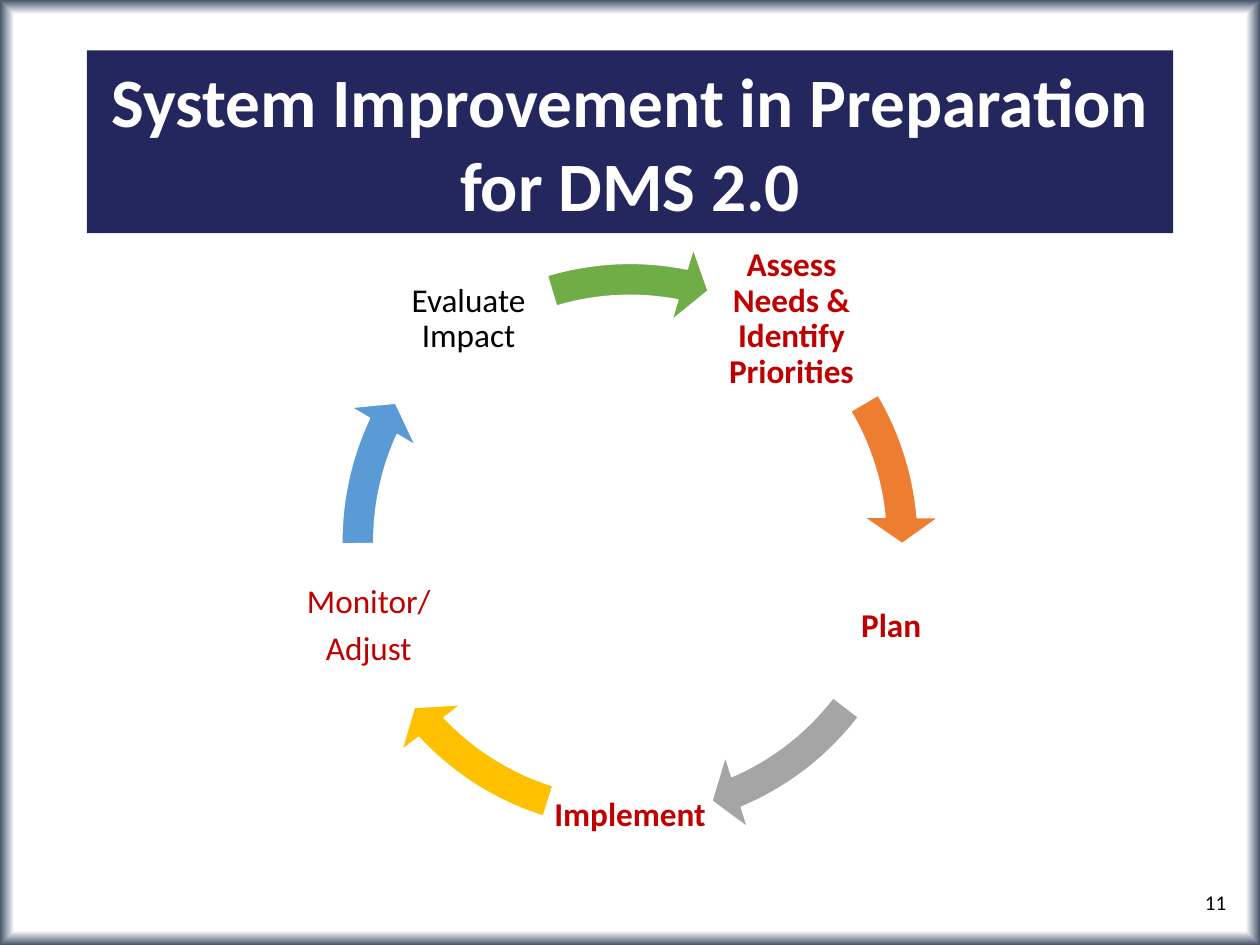
from math import cos, radians, sin

from lxml.etree import SubElement
from pptx import Presentation
from pptx.dml.color import RGBColor as Color
from pptx.enum.shapes import MSO_SHAPE as Shape
from pptx.enum.text import MSO_ANCHOR as Anchor, PP_ALIGN as Align
from pptx.oxml.ns import qn
from pptx.util import Inches, Pt

WIDTH, HEIGHT = 10, 7.5
FONT = "Calibri"
COLORS = {
    "white": "FFFFFF", "edge": "44546A", "banner": "24275E",
    "red": "C00000", "black": "000000", "orange": "ED7D31",
    "gray": "A5A5A5", "gold": "FFC000", "blue": "5B9BD5", "green": "70AD47",
}
STEPS = [
    ("Assess Needs & Identify Priorities", "red", True),
    ("Plan", "red", True),
    ("Implement", "red", True),
    ("Monitor/\nAdjust", "red", False),
    ("Evaluate Impact", "black", False),
]
ARROWS = [
    ("orange", 329.42, 354.9, 0),
    ("gray", 37.54, 66.93, 0),
    ("gold", 107.48, 136.86, 0),
    ("blue", 179.5, 204.98, 0),
    ("green", 253.3, 281.11, 0.08),
]
LABEL_SIZE = 1.31
LABEL_RADIUS = 2.18
ADJUST_PER_DEGREE = 0.6


def color(name):
    return Color.from_string(COLORS[name])


def write(shape, text, size, ink, bold=False, align=Align.CENTER):
    frame = shape.text_frame
    frame.word_wrap = True
    frame.vertical_anchor = Anchor.MIDDLE
    frame.text = text
    for para in frame.paragraphs:
        para.alignment = align
        for span in para.runs:
            span.font.name = FONT
            span.font.size = Pt(size)
            span.font.bold = bold
            span.font.color.rgb = color(ink)
    return frame


def paint_background(page):
    fill = page.background.fill
    fill.gradient()
    for stop, name, position in zip(fill.gradient_stops, ("white", "edge"), (0.97, 1)):
        stop.color.rgb = color(name)
        stop.position = position
    gradient = page.element.find(".//" + qn("a:gradFill"))
    for linear in gradient.findall(qn("a:lin")):
        gradient.remove(linear)
    route = SubElement(gradient, qn("a:path"), {"path": "shape"})
    sides = dict.fromkeys("ltrb", "50000")
    SubElement(route, qn("a:fillToRect"), sides)


def add_label(page, left, top, text, ink, bold):
    box = page.shapes.add_textbox(*map(Inches, (left, top, LABEL_SIZE, LABEL_SIZE)))
    frame = write(box, text, 19, ink, bold)
    frame.margin_left = frame.margin_right = Inches(0.03)
    frame.margin_top = frame.margin_bottom = Inches(0.03)
    for para in frame.paragraphs:
        para.line_spacing = 0.9
        para.space_after = Pt(6.65)


def add_arrow(page, left, top, size, name, start, end):
    arrow = page.shapes.add_shape(
        Shape.CIRCULAR_ARROW, *map(Inches, (left, top, size, size)))
    angles = [degrees * ADJUST_PER_DEGREE for degrees in (5.6, end, start)]
    for index, value in enumerate([0.052, *angles, 0.061]):
        arrow.adjustments[index] = value
    arrow.shadow.inherit = False
    arrow.fill.solid()
    arrow.fill.fore_color.rgb = color(name)
    arrow.line.color.rgb = color("white")
    arrow.line.width = Pt(1)


def add_cycle(page, left, top, size):
    center_x, center_y = left + size / 2, top + size / 2
    turn = 360 / len(STEPS)
    for index, (step, arrow) in enumerate(zip(STEPS, ARROWS)):
        angle = radians(index * turn - 54)
        label_left = center_x + LABEL_RADIUS * cos(angle) - LABEL_SIZE / 2
        label_top = center_y + LABEL_RADIUS * sin(angle) - LABEL_SIZE / 2
        add_label(page, label_left, label_top, *step)
        name, start, end, drop = arrow
        add_arrow(page, left, top + drop, size, name, start, end)


def add_banner(page, left, top, width, height):
    banner = page.shapes.add_shape(
        Shape.RECTANGLE, *map(Inches, (left, top, width, height)))
    banner.shadow.inherit = False
    banner.fill.solid()
    banner.fill.fore_color.rgb = color("banner")
    banner.line.fill.background()
    write(banner, "System Improvement in Preparation for DMS 2.0", 39.6, "white", True)


def add_page_number(page, left, top, width, height):
    box = page.shapes.add_textbox(*map(Inches, (left, top, width, height)))
    write(box, "11", 12, "black", align=Align.RIGHT)


def main():
    deck = Presentation()
    deck.slide_width, deck.slide_height = Inches(WIDTH), Inches(HEIGHT)
    page = deck.slides.add_slide(deck.slide_layouts[6])
    paint_background(page)
    cycle_size = 0.492 * WIDTH
    add_cycle(page, (WIDTH - cycle_size) / 2, 0.245 * HEIGHT, cycle_size)
    banner_width = 0.862 * WIDTH
    add_banner(page, (WIDTH - banner_width) / 2, 0.4, banner_width, 1.45)
    add_page_number(page, 0.758 * WIDTH, 0.928 * HEIGHT, 0.225 * WIDTH, 0.4)
    deck.save("out.pptx")


if __name__ == "__main__":
    main()
